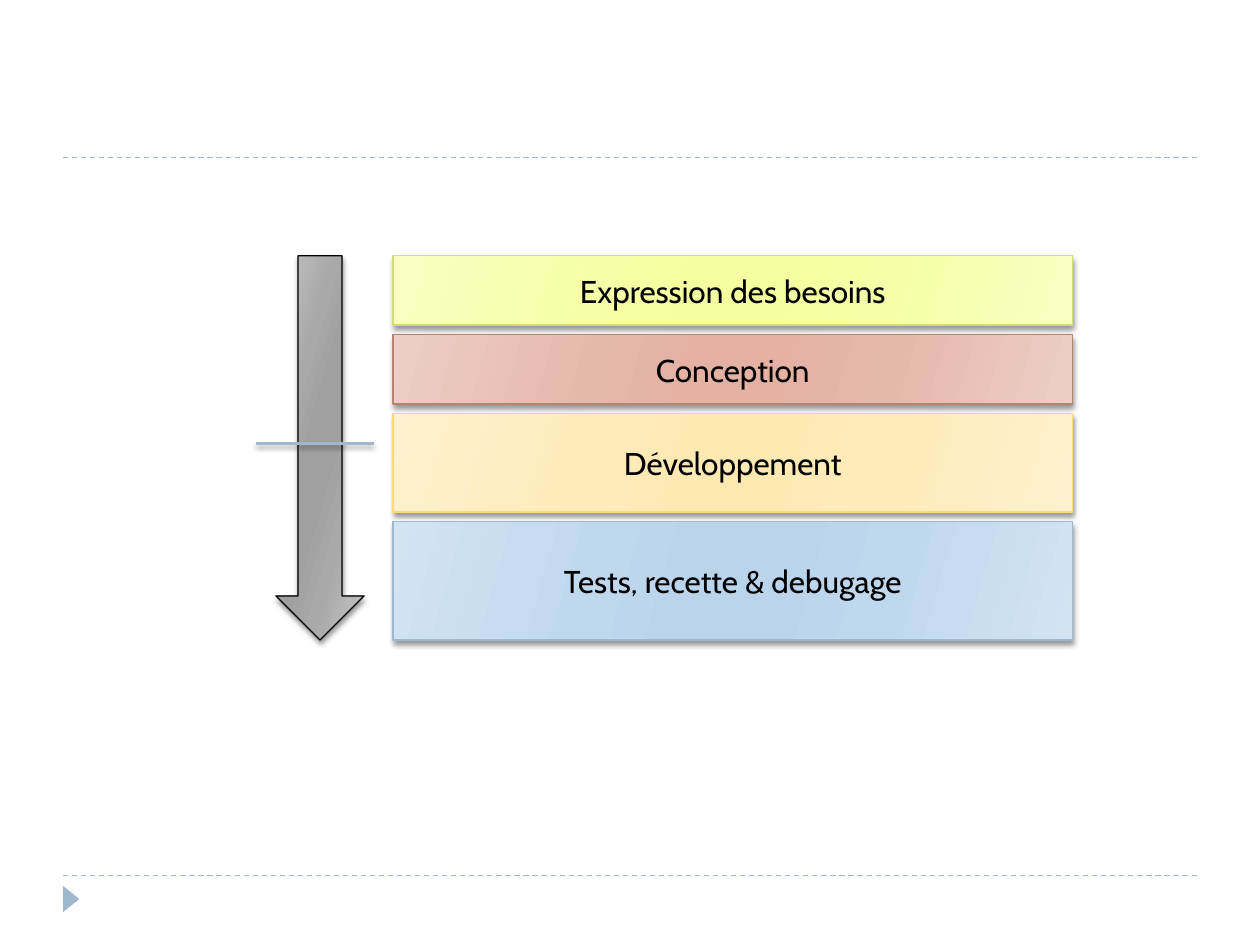
import lxml.etree
import pptx
import pptx.dml.color
import pptx.enum.dml
import pptx.enum.shapes
import pptx.enum.text
import pptx.oxml.ns
import pptx.util

Pt = pptx.util.Pt
Colour = pptx.dml.color.RGBColor
Shape = pptx.enum.shapes.MSO_SHAPE
qn = pptx.oxml.ns.qn

BLACK = Colour(0x00, 0x00, 0x00)
BLUE = Colour(0x9F, 0xB8, 0xCD)
LIME_LINE = Colour(0xD2, 0xDA, 0x7A)
RUST_LINE = Colour(0xB8, 0x84, 0x72)
AMBER_LINE = Colour(0xFA, 0xDA, 0x7A)
GREYS = (Colour(0xC5, 0xC5, 0xC5), Colour(0xA9, 0xA9, 0xA9), Colour(0xA0, 0xA0, 0xA0))
LIMES = (Colour(0xF8, 0xFE, 0xC2), Colour(0xF6, 0xFF, 0xA7), Colour(0xF6, 0xFF, 0x9F))
RUSTS = (Colour(0xEC, 0xCE, 0xC6), Colour(0xE6, 0xB8, 0xAC), Colour(0xE4, 0xB1, 0xA3))
AMBERS = (Colour(0xFF, 0xF0, 0xCF), Colour(0xFF, 0xEB, 0xBA), Colour(0xFF, 0xE9, 0xB3))
BLUES = (Colour(0xD3, 0xE3, 0xF2), Colour(0xC0, 0xD8, 0xEE), Colour(0xBA, 0xD4, 0xEC))

FONT = "Cabin"
GAP = 5.52
PHASES = [
    ("Expression des besoins", 39.6, LIMES, LIME_LINE),
    ("Conception", 39.6, RUSTS, RUST_LINE),
    ("Développement", 56.16, AMBERS, AMBER_LINE),
    ("Tests, recette & debugage", 67.68, BLUES, BLUE),
]


def add_effects(item, shadowed):
    """Give an item a soft shadow below it, or no shadow at all."""
    effects = lxml.etree.SubElement(item._element.spPr, qn("a:effectLst"))
    if shadowed:
        shadow = lxml.etree.SubElement(
            effects, qn("a:outerShdw"), blurRad=str(Pt(3)), dist=str(Pt(2)),
            dir="5400000", rotWithShape="0")
        colour = lxml.etree.SubElement(shadow, qn("a:srgbClr"), val=str(BLACK))
        lxml.etree.SubElement(colour, qn("a:alpha"), val="40000")


def style_glossy(shape, shades, line_colour):
    """Apply a mirrored gradient, a thin outline and a shadow."""
    shape.fill.gradient()
    shape.fill.gradient_angle = 344
    stops = shape._element.spPr.find(".//" + qn("a:gsLst"))
    for stop in list(stops):
        stops.remove(stop)
    for place, shade in zip((0, 30, 45, 55, 73, 100), shades + shades[::-1]):
        stop = lxml.etree.SubElement(stops, qn("a:gs"), pos=str(place * 1000))
        lxml.etree.SubElement(stop, qn("a:srgbClr"), val=str(shade))
    shape.line.color.rgb = line_colour
    shape.line.width = Pt(0.75)
    add_effects(shape, True)


def add_rule(page, left, top, width, weight, dashed=False, shadowed=False):
    """Draw a horizontal blue line."""
    rule = page.shapes.add_connector(
        pptx.enum.shapes.MSO_CONNECTOR.STRAIGHT,
        Pt(left), Pt(top), Pt(left + width), Pt(top))
    rule.line.color.rgb = BLUE
    rule.line.width = Pt(weight)
    if dashed:
        rule.line.dash_style = pptx.enum.dml.MSO_LINE.DASH
    add_effects(rule, shadowed)


def add_frame(page, left, top, width, height):
    """Draw the two dashed rules and the footer marker."""
    for offset in (0, height):
        add_rule(page, left, top + offset, width, 0.75, dashed=True)
    marker = page.shapes.add_shape(
        Shape.ISOSCELES_TRIANGLE, Pt(left - 2.9), Pt(top + height + 8.6), Pt(15.1), Pt(9.4))
    marker.rotation = 90
    marker.fill.solid()
    marker.fill.fore_color.rgb = BLUE
    marker.line.fill.background()
    marker.shadow.inherit = False


def add_timeline(page, left, top, width, height):
    """Draw the downward arrow and the mark across it."""
    arrow = page.shapes.add_shape(
        Shape.DOWN_ARROW, Pt(left), Pt(top), Pt(width), Pt(height))
    style_glossy(arrow, GREYS, BLACK)
    add_rule(page, left - 11.5, top + 107.3, 67.7, 1.5, shadowed=True)


def add_phases(page, left, top, width):
    """Stack the project phases as grouped bars."""
    group = page.shapes.add_group_shape()
    for label, height, shades, line_colour in PHASES:
        box = group.shapes.add_shape(
            Shape.RECTANGLE, Pt(left), Pt(top), Pt(width), Pt(height))
        style_glossy(box, shades, line_colour)
        box.text_frame.word_wrap = True
        box.text_frame.vertical_anchor = pptx.enum.text.MSO_ANCHOR.MIDDLE
        para = box.text_frame.paragraphs[0]
        para.alignment = pptx.enum.text.PP_ALIGN.CENTER
        span = para.add_run()
        span.text = label
        span.font.name = FONT
        span.font.size = Pt(18)
        span.font.color.rgb = BLACK
        top += height + GAP


def main():
    """Build and save the slide."""
    deck = pptx.Presentation()
    deck.slide_width, deck.slide_height = Pt(720), Pt(540)
    page = deck.slides.add_slide(deck.slide_layouts[6])
    add_frame(page, 36, 90, 648, 410.4)
    add_timeline(page, 157.7, 146.16, 50.4, 219.6)
    add_phases(page, 224.64, 146.16, 388.1)
    deck.save("out.pptx")


if __name__ == "__main__":
    main()
